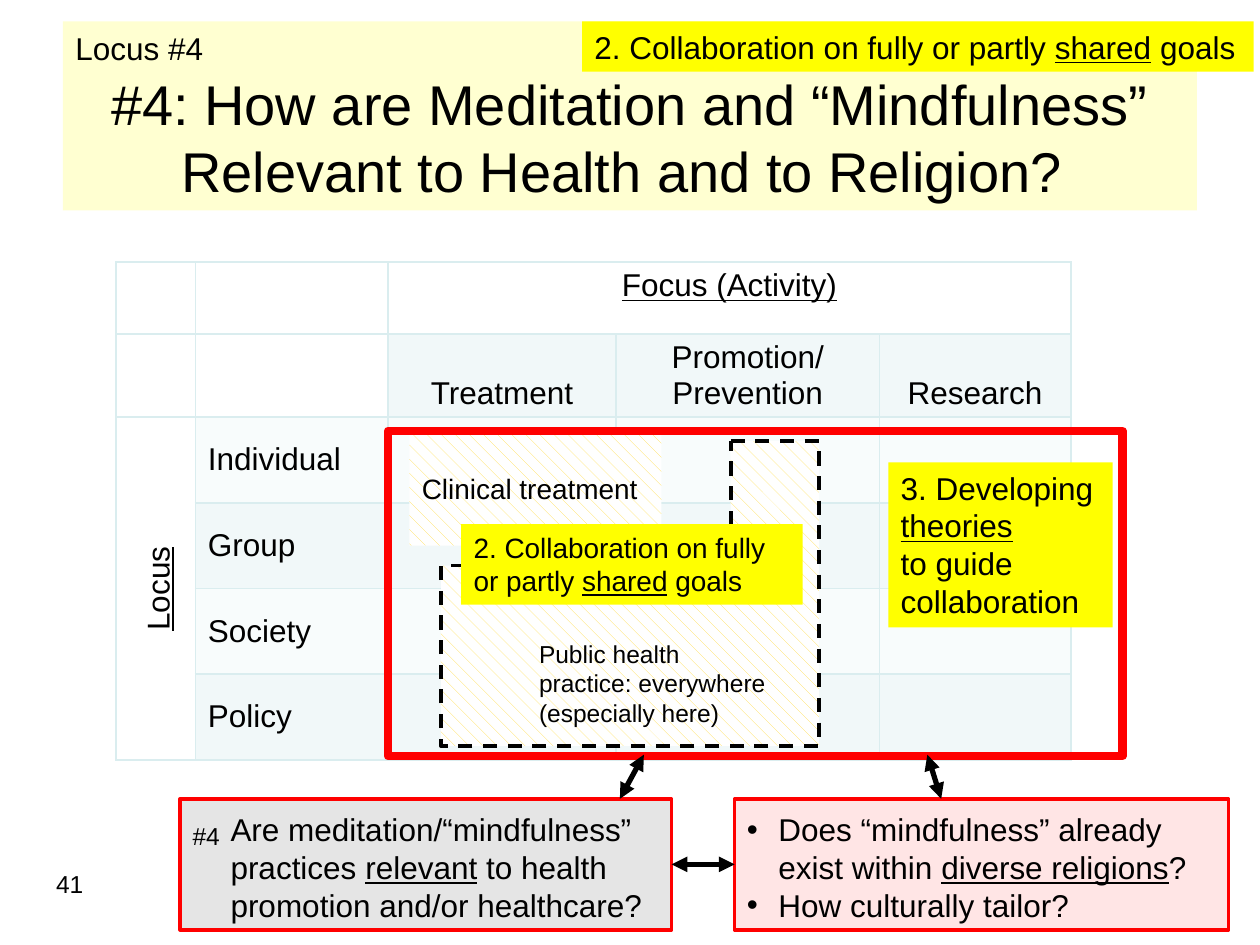
from dataclasses import dataclass
from typing import Optional

from pptx import Presentation
from pptx.dml.color import RGBColor as Rgb
from pptx.enum.dml import MSO_LINE as Dash, MSO_PATTERN as Pattern
from pptx.enum.shapes import MSO_CONNECTOR as Link, MSO_SHAPE as Form
from pptx.enum.text import MSO_ANCHOR as Anchor, PP_ALIGN as Align
from pptx.oxml.ns import qn
from pptx.oxml.xmlchemy import OxmlElement as Node
from pptx.util import Inches, Pt


@dataclass(frozen=True)
class Theme:
    font: str = "Arial"
    ink: str = "000000"
    white: str = "FFFFFF"
    cream: str = "FFFF99"
    note: str = "FFFF00"
    red: str = "FF0000"
    gray: str = "BFBFBF"
    gold: str = "FFDD4B"
    edge: str = "DAEDEF"
    pale: str = "F8FCFC"
    mint: str = "F1F8F9"
    title: int = 32
    body: int = 18
    mid: int = 16
    small: int = 14


T = Theme()
COLS, ROWS = 100, 75  # slide grid, ten cells to the inch


@dataclass(frozen=True)
class Box:
    """A block placed by the columns and rows of the slide grid."""
    at: tuple
    text: str = ""
    size: int = T.body
    notch: Optional[tuple] = None  # columns and rows cut off the top left
    fill: Optional[str] = None
    alpha: int = 100
    hatch: bool = False
    line: Optional[str] = None
    width: float = 2
    dash: bool = False
    anchor: Anchor = Anchor.TOP
    align: Align = Align.LEFT
    left: float = 1
    wrap: bool = True
    bullet: bool = False


def unit(n: float) -> int:
    return Inches(n * 10 / COLS)


def child(parent, tag: str, **attrs):
    node = Node(tag)
    for key, val in attrs.items():
        node.set(key, val)
    parent.append(node)
    return node


def write(frame, text: str, *, size: int = T.body, align=Align.LEFT,
          bullet: bool = False) -> None:
    """Paragraphs split at |, lines at a newline, underlined words at _."""
    for i, part in enumerate(text.split("|")):
        para = frame.add_paragraph() if i else frame.paragraphs[0]
        if bullet:
            props = para._p.get_or_add_pPr()
            props.set("marL", str(unit(2.5)))
            props.set("indent", str(-unit(2.5)))
            child(props, "a:buFont", typeface=T.font)
            child(props, "a:buChar", char="•")
        para.alignment = align
        for j, row in enumerate(part.split("\n")):
            if j:
                para.add_line_break()
            for k, words in enumerate(row.split("_")):
                if not words:
                    continue
                run = para.add_run()
                run.text = words
                font = run.font
                font.name, font.size = T.font, Pt(size)
                font.color.rgb = Rgb.from_string(T.ink)
                font.underline = k % 2 == 1


def paint(fill, color: str) -> None:
    fill.solid()
    fill.fore_color.rgb = Rgb.from_string(color)


def outline(slide, box: Box):
    if not box.notch:
        return slide.shapes.add_shape(Form.RECTANGLE, *map(unit, box.at))
    x, y, wide, high = box.at
    dx, dy = box.notch
    right, low = x + wide, y + high
    pen = slide.shapes.build_freeform(unit(x + dx), unit(y))
    spots = ((right, y), (right, low), (x, low), (x, y + dy), (x + dx, y + dy))
    pen.add_line_segments([(unit(a), unit(b)) for a, b in spots])
    return pen.convert_to_shape()


def draw(slide, box: Box) -> None:
    shape = outline(slide, box)
    shape.shadow.inherit = False
    if box.hatch:
        shape.fill.patterned()
        shape.fill.pattern = Pattern.SHINGLE
        shape.fill.fore_color.rgb = Rgb.from_string(T.gold)
        shape.fill.back_color.rgb = Rgb.from_string(T.white)
    elif box.fill:
        paint(shape.fill, box.fill)
        if box.alpha < 100:
            color = shape.element.spPr.find(qn("a:solidFill"))[0]
            child(color, "a:alpha", val=str(box.alpha * 1000))
    else:
        shape.fill.background()
    if box.line:
        paint(shape.line.fill, box.line)
        shape.line.width = Pt(box.width)
        if box.dash:
            shape.line.dash_style = Dash.DASH
    else:
        shape.line.fill.background()
    if box.text:
        frame = shape.text_frame
        frame.word_wrap, frame.vertical_anchor = box.wrap, box.anchor
        frame.margin_left = unit(box.left)
        write(frame, box.text, size=box.size, align=box.align, bullet=box.bullet)


def arrow(slide, start: tuple, end: tuple) -> None:
    link = slide.shapes.add_connector(Link.STRAIGHT, *map(unit, start + end))
    paint(link.line.fill, T.ink)
    link.line.width = Pt(3)
    for tag in ("a:headEnd", "a:tailEnd"):
        child(link.line._get_or_add_ln(), tag, type="triangle")
    child(link.element.spPr, "a:effectLst")


def style(cell, color: str) -> None:
    props = cell._tc.get_or_add_tcPr()
    for side in "LRTB":
        line = child(props, f"a:ln{side}", w=str(Pt(1)))
        child(child(line, "a:solidFill"), "a:srgbClr", val=T.edge)
    paint(cell.fill, color)


def matrix(slide) -> None:
    wide, high = (6.3, 15.3, 18.1, 20.9, 15.2), (5.7, 6.6) + (6.8,) * 4
    sides = unit(9.2), unit(20.8), unit(sum(wide)), unit(sum(high))
    table = slide.shapes.add_table(len(high), len(wide), *sides).table
    table.first_row = table.horz_banding = False
    for col, n in zip(table.columns, wide):
        col.width = unit(n)
    for row, n in zip(table.rows, high):
        row.height = unit(n)
    for r in range(len(high)):
        for c in range(len(wide)):
            plain = r == 0 or c == 0 or (r == 1 and c == 1)
            band = T.mint if r % 2 else T.pale
            style(table.cell(r, c), T.white if plain else band)
    # Headings across the top
    focus = table.cell(0, 2)
    focus.merge(table.cell(0, 4))
    write(focus.text_frame, "_Focus (Activity)_", align=Align.CENTER)
    for c, name in enumerate(("Treatment", "Promotion/\nPrevention", "Research"), 2):
        cell = table.cell(1, c)
        cell.vertical_anchor = Anchor.BOTTOM
        write(cell.text_frame, name, align=Align.CENTER)
    # Headings down the side
    locus = table.cell(2, 0)
    locus.merge(table.cell(5, 0))
    locus._tc.get_or_add_tcPr().set("vert", "vert270")
    write(locus.text_frame, "_Locus_", align=Align.CENTER)
    names = [table.cell(r, 1) for r in range(2, 6)]
    for cell, name in zip(names, ("Individual", "Group", "Society", "Policy")):
        write(cell.text_frame, name)
    for cell in [locus] + names:
        cell.margin_top = cell.margin_bottom = unit(2)


GOALS = "2. Collaboration on fully or partly _shared_ goals"
TITLE = Box((5, 1.7, 90, 15), "#4: How are Meditation and “Mindfulness” Relevant to Health and to Religion? ",
            T.title, fill=T.cream, alpha=45, anchor=Anchor.BOTTOM, align=Align.CENTER)
BOXES = (
    Box((2.4, 68.5, 5.2, 5.2), "41", T.small, align=Align.RIGHT),
    # Areas of practice over the matrix
    Box((32.5, 34.2, 20, 9.1), "Clinical treatment", T.mid, hatch=True, anchor=Anchor.MIDDLE),
    Box((35, 35, 30, 24.2), notch=(23, 9.9), hatch=True, line=T.ink, dash=True),
    Box((41.8, 50.2, 20, 8.1), "Public health practice: everywhere (especially here)", T.small),
    Box((70.5, 36.7, 17.8, 13.1), "3. Developing _theories_\nto guide collaboration", fill=T.note),
    Box((36.6, 41.6, 27.1, 6.4), GOALS, T.mid, fill=T.note),
    Box((30.8, 34.2, 58.3, 25.8), line=T.red, width=5),
    # Questions below
    Box((14.3, 63.4, 39, 10.4),
        "Are meditation/“mindfulness” practices _relevant_ to health promotion and/or healthcare?",
        fill=T.gray, alpha=40, line=T.red, anchor=Anchor.BOTTOM, left=4),
    Box((14.3, 64.7, 4.2, 3.4), "#4", T.small, wrap=False),
    Box((58.3, 63.4, 39.2, 10.4),
        "Does “mindfulness” already exist within _diverse religions_?|How culturally tailor?",
        fill=T.red, alpha=10, line=T.red, anchor=Anchor.BOTTOM, bullet=True),
    # Tags at the top
    Box((5, 0, 28.4, 5.8), "Locus #4", anchor=Anchor.BOTTOM),
    Box((46.2, 1.7, 53.3, 4), GOALS, fill=T.note, wrap=False),
)
ARROWS = (((51.1, 59.9), (49.2, 63.4)), ((73.6, 59.9), (74.7, 63.4)),
          ((53.3, 68.6), (58.3, 68.6)))


def main() -> None:
    deck = Presentation()
    deck.slide_width, deck.slide_height = unit(COLS), unit(ROWS)
    slide = deck.slides.add_slide(deck.slide_layouts[6])
    draw(slide, TITLE)
    matrix(slide)
    for box in BOXES:
        draw(slide, box)
    for ends in ARROWS:
        arrow(slide, *ends)
    deck.save("out.pptx")


if __name__ == "__main__":
    main()
